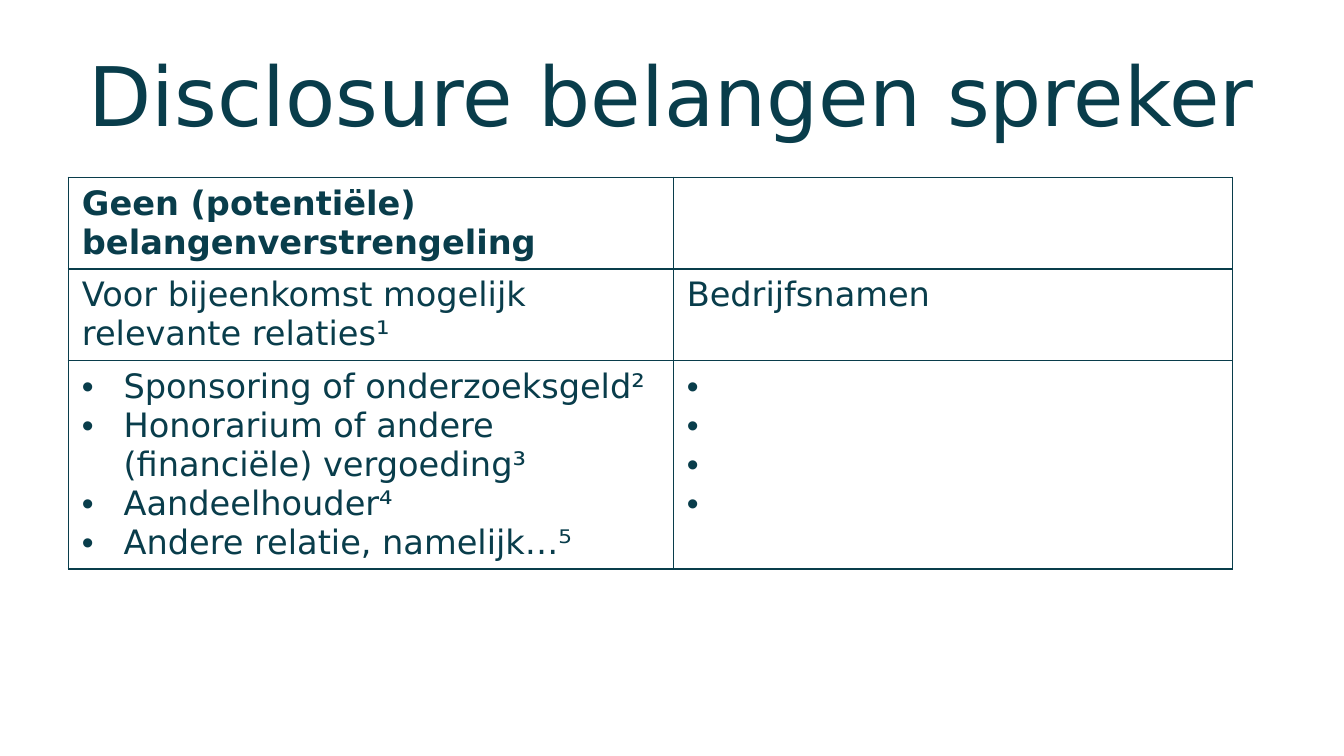
from dataclasses import dataclass

from lxml import etree
from pptx import Presentation
from pptx.dml.color import RGBColor
from pptx.enum.text import MSO_ANCHOR, MSO_AUTO_SIZE, PP_ALIGN
from pptx.oxml.ns import qn
from pptx.util import Inches, Pt

CENTER = PP_ALIGN.CENTER
MIDDLE = MSO_ANCHOR.MIDDLE
NO_AUTOFIT = MSO_AUTO_SIZE.NONE
TITLE_ONLY = 5


@dataclass(frozen=True)
class Theme:
    ink: str = "093D4B"
    font: str = "DejaVu Sans"
    title_size: int = 44
    body_size: int = 18
    border_width: int = 1
    bullet_indent: float = 0.31


THEME = Theme()

COLUMN_WIDTHS = [4.5, 4.16]
ROW_HEIGHTS = [0.68, 0.68, 1.55]
RELATIONS = [
    "Sponsoring of onderzoeksgeld²",
    "Honorarium of andere (financiële) vergoeding³",
    "Aandeelhouder⁴",
    "Andere relatie, namelijk…⁵",
]
# A single space keeps the bullet of an unfilled answer visible.
ANSWERS = [" "] * len(RELATIONS)
ROWS = [
    [["Geen (potentiële)", "belangenverstrengeling"], [""]],
    [["Voor bijeenkomst mogelijk", "relevante relaties¹"], ["Bedrijfsnamen"]],
    [RELATIONS, ANSWERS],
]


def format_font(font, size, bold=False):
    font.name = THEME.font
    font.size = Pt(size)
    font.bold = bold
    font.color.rgb = RGBColor.from_string(THEME.ink)


def add_bullet(para):
    properties = para._p.get_or_add_pPr()
    indent = Inches(THEME.bullet_indent)
    properties.set("marL", str(indent))
    properties.set("indent", str(-indent))
    etree.SubElement(properties, qn("a:buFont"), typeface="Arial")
    etree.SubElement(properties, qn("a:buChar"), char="•")


def draw_borders(cell):
    properties = cell._tc.get_or_add_tcPr()
    for side in ("lnL", "lnR", "lnT", "lnB"):
        line = etree.SubElement(
            properties, qn(f"a:{side}"), w=str(Pt(THEME.border_width))
        )
        fill = etree.SubElement(line, qn("a:solidFill"))
        etree.SubElement(fill, qn("a:srgbClr"), val=THEME.ink)


def fill_cell(cell, lines, bold, bulleted):
    draw_borders(cell)
    cell.fill.background()
    frame = cell.text_frame
    frame.text = "\n".join(lines)
    for para in frame.paragraphs:
        if bulleted:
            add_bullet(para)
        format_font(para.font, THEME.body_size, bold)
        for span in para.runs:
            format_font(span.font, THEME.body_size, bold)


def set_title(page, text):
    title = page.shapes.title
    title.left, title.top = Inches(0.5), Inches(0.23)
    title.width, title.height = Inches(9), Inches(0.94)
    frame = title.text_frame
    frame.text = text
    frame.auto_size = NO_AUTOFIT
    frame.vertical_anchor = MIDDLE
    para = frame.paragraphs[0]
    para.alignment = CENTER
    format_font(para.runs[0].font, THEME.title_size)


def add_disclosure_table(page):
    table = page.shapes.add_table(
        len(ROWS), len(COLUMN_WIDTHS), Inches(0.51), Inches(1.32),
        Inches(sum(COLUMN_WIDTHS)), Inches(sum(ROW_HEIGHTS)),
    ).table
    table.first_row = False
    table.horz_banding = False
    for column, width in zip(table.columns, COLUMN_WIDTHS):
        column.width = Inches(width)
    for row, height in zip(table.rows, ROW_HEIGHTS):
        row.height = Inches(height)
    for row_index, row in enumerate(ROWS):
        for column_index, lines in enumerate(row):
            fill_cell(
                table.cell(row_index, column_index), lines,
                bold=row_index == 0, bulleted=row_index == len(ROWS) - 1,
            )


def main():
    deck = Presentation()
    deck.slide_width = Inches(10)
    deck.slide_height = deck.slide_width * 9 // 16
    page = deck.slides.add_slide(deck.slide_layouts[TITLE_ONLY])
    set_title(page, "Disclosure belangen spreker")
    add_disclosure_table(page)
    deck.save("out.pptx")


if __name__ == "__main__":
    main()
